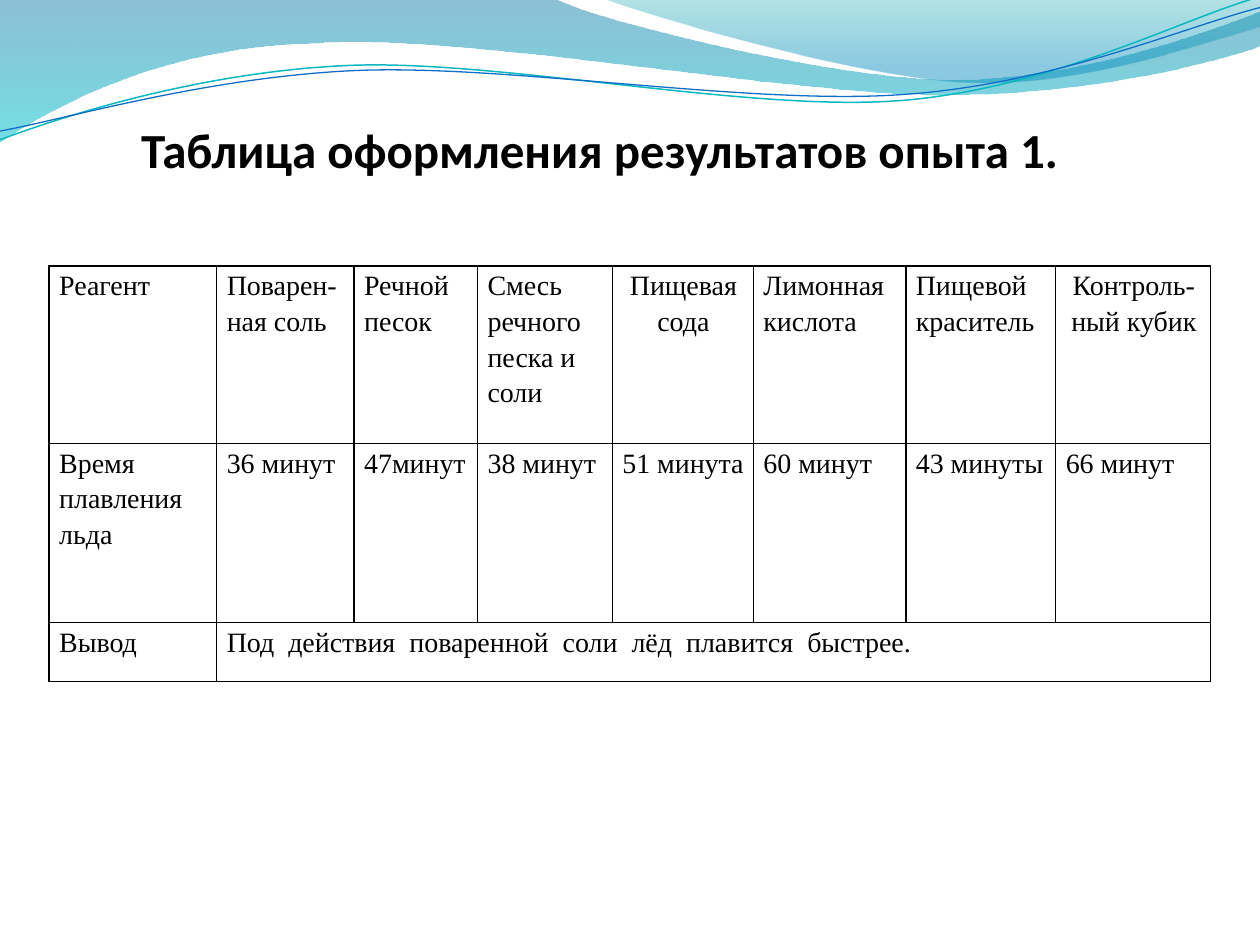
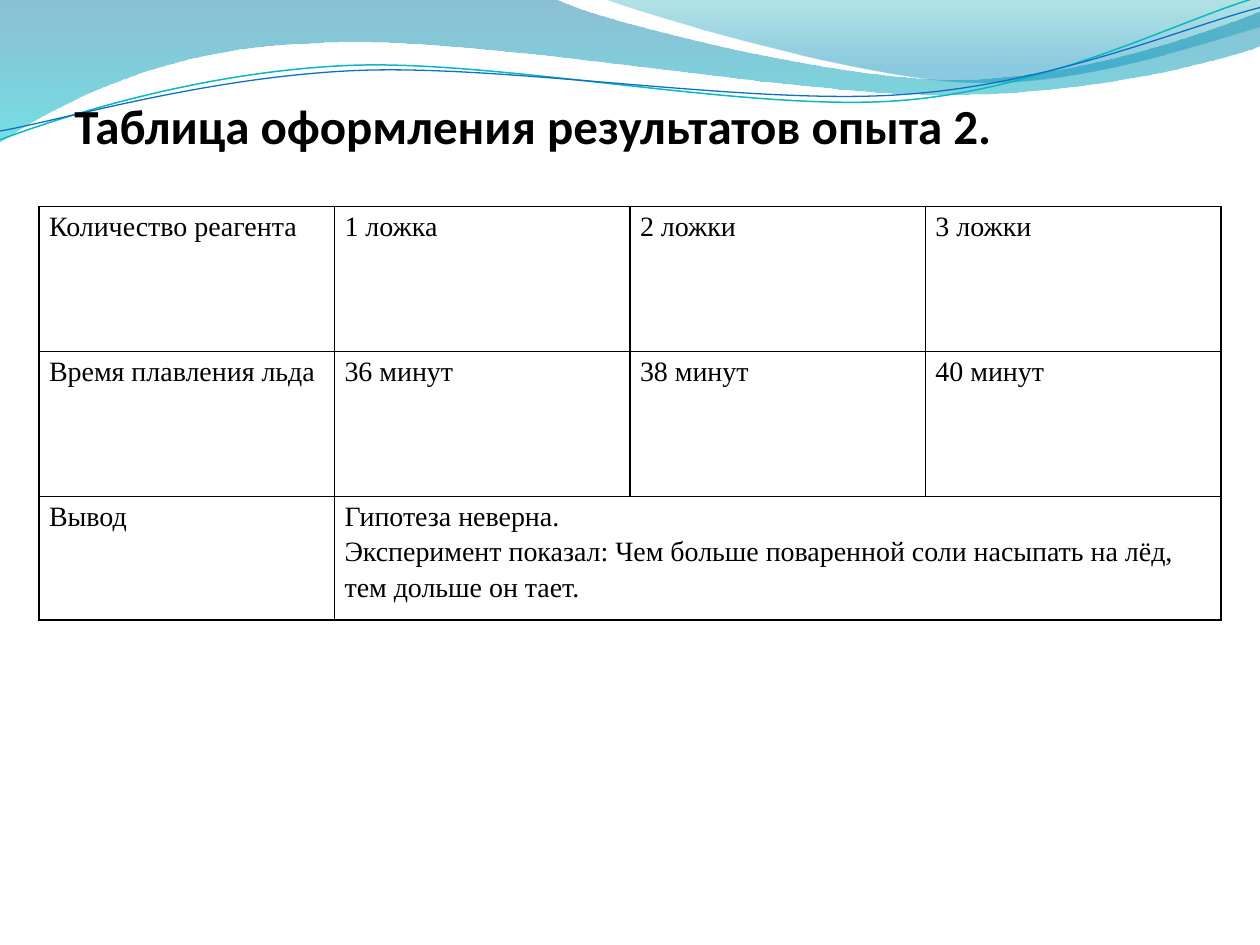
import pptx
import pptx.dml.color
import pptx.enum.text
import pptx.oxml
import pptx.oxml.ns
import pptx.util
from pptx.util import Inches

COLORS = {
    "ink": "000000",
    "band_top": "0074A1",
    "band_bottom": "00C6CF",
    "crest_top": "00A1A9",
    "crest_bottom": "008BBF",
    "teal_line": "0AB8BF",
    "blue_line": "0F6FC6",
}
ALIGN = pptx.enum.text.PP_ALIGN
ANCHOR = pptx.enum.text.MSO_ANCHOR
NS = pptx.oxml.ns.nsdecls("a")
TITLE_FONT = {"name": "Calibri", "size": pptx.util.Pt(28), "bold": True}
CELL_FONT = {"name": "Times New Roman", "size": pptx.util.Pt(16), "bold": False}
TITLE_FRAME = {
    "word_wrap": True,
    "auto_size": pptx.enum.text.MSO_AUTO_SIZE.NONE,
    "vertical_anchor": ANCHOR.MIDDLE,
}
CELL_FRAME = {
    "margin_left": Inches(0.08),
    "margin_right": Inches(0.07),
    "margin_top": 0,
    "margin_bottom": 0,
    "vertical_anchor": ANCHOR.TOP,
}
TABLE_STYLE = {"first_row": False, "horz_banding": False}

BAND = [
    (0, 0), (4.4, -0.01),
    (4.76, 0.17, 6.64, 0.63, 7.58, 0.63),
    (8.53, 0.63, 9.58, 0.26, 10, 0.09),
    (10.01, 0.36),
    (9.83, 0.44, 8.7, 0.76, 7.46, 0.75),
    (6.22, 0.75, 3.82, 0.28, 2.57, 0.34),
    (1.29, 0.36, 0.46, 0.83, -0.01, 1.13),
    (0, 0),
]
CREST = [
    (4.79, -0.01),
    (5.09, 0.11, 6.82, 0.62, 7.69, 0.65),
    (8.56, 0.69, 9.61, 0.32, 10, 0.21),
    (10, 0), (4.79, -0.01),
]
TEAL_CURVE = [
    (0, 1.11),
    (0.48, 0.93, 1.58, 0.57, 2.77, 0.52),
    (3.95, 0.47, 5.93, 0.89, 7.13, 0.8),
    (8.33, 0.71, 9.38, 0.15, 9.98, -0.02),
]
BLUE_CURVE = [
    (0, 1.04),
    (0.47, 0.96, 1.64, 0.61, 2.83, 0.56),
    (4.03, 0.51, 5.97, 0.84, 7.17, 0.75),
    (8.36, 0.67, 9.41, 0.21, 10, 0.06),
]
WAVE_FILLS = [
    (BAND, [(0, "band_top", 45), (0.999, "band_bottom", 55)]),
    (CREST, [(0, "crest_top", 30), (0.8, "crest_bottom", 45)]),
]
WAVE_FILLS[0][1][1] = (1, "band_bottom", 55)
WAVE_LINES = [(TEAL_CURVE, "teal_line", 0.85), (BLUE_CURVE, "blue_line", 0.75)]


def rgb(name):
    return pptx.dml.color.RGBColor.from_string(COLORS[name])


def apply(obj, values):
    for key, value in values.items():
        setattr(obj, key, value)


def set_font(font, values):
    apply(font, values)
    font.color.rgb = rgb("ink")


def add_outline(s, box, segments, close):
    placed = [[(Inches(box[0] + x), Inches(box[1] + y))
               for x, y in zip(seg[::2], seg[1::2])] for seg in segments]
    builder = s.shapes.build_freeform(*placed[0][0])
    builder.add_line_segments([seg[-1] for seg in placed[1:]], close=close)
    sp = builder.convert_to_shape()
    sp.shadow.inherit = False
    lines = sp._element.spPr.findall(".//" + pptx.oxml.ns.qn("a:lnTo"))
    for line, seg in zip(lines, placed[1:]):
        if len(seg) == 3:
            points = "".join(f'<a:pt x="{x - sp.left}" y="{y - sp.top}"/>' for x, y in seg)
            curve = pptx.oxml.parse_xml(f"<a:cubicBezTo {NS}>{points}</a:cubicBezTo>")
            line.getparent().replace(line, curve)
    return sp


def add_waves(s, box):
    for segments, stops in WAVE_FILLS:
        sp = add_outline(s, box, segments, True)
        sp.line.fill.background()
        sp.fill.gradient()
        sp.fill.gradient_angle = 270
        for stop, (position, color, _) in zip(sp.fill.gradient_stops, stops):
            stop.position = position
            stop.color.rgb = rgb(color)
        tints = sp._element.spPr.findall(".//" + pptx.oxml.ns.qn("a:srgbClr"))
        for tint, (_, _, opacity) in zip(tints, stops):
            tint.append(pptx.oxml.parse_xml(f'<a:alpha {NS} val="{opacity * 1000}"/>'))
    for segments, color, width in WAVE_LINES:
        sp = add_outline(s, box, segments, False)
        sp.fill.background()
        sp.line.color.rgb = rgb(color)
        sp.line.width = pptx.util.Pt(width)


def add_title(s, box, text, indent):
    sp = s.shapes.title
    apply(sp, dict(zip(("left", "top", "width", "height"), map(Inches, box))))
    sp._element.getparent().append(sp._element)
    tf = sp.text_frame
    apply(tf, TITLE_FRAME)
    tf.margin_left = Inches(indent)
    p = tf.paragraphs[0]
    p.alignment = ALIGN.LEFT
    r = p.add_run()
    r.text = text
    set_font(r.font, TITLE_FONT)


def add_borders(cell):
    tc_pr = cell._tc.get_or_add_tcPr()
    for side in "LRTB":
        tc_pr.append(pptx.oxml.parse_xml(
            f'<a:ln{side} {NS} w="12700"><a:solidFill>'
            f'<a:srgbClr val="{COLORS["ink"]}"/></a:solidFill></a:ln{side}>'))


def widen_gaps(p, spacing):
    words = p.text.split(" ")
    p.clear()
    for i, word in enumerate(words):
        if i:
            r = p.add_run()
            r.text = " "
            r.font._element.set("spc", str(spacing))
        p.add_run().text = word


def add_results(s, box, widths, heights, rows, centered=(), gap=0):
    table = s.shapes.add_table(len(heights), len(widths), *map(Inches, box)).table
    apply(table, TABLE_STYLE)
    for col, width in zip(table.columns, widths):
        col.width = Inches(width)
    for row, height in zip(table.rows, heights):
        row.height = Inches(height)
    for cell in table.iter_cells():
        add_borders(cell)
        cell.fill.background()
        apply(cell, CELL_FRAME)
    last = len(heights) - 1
    conclusion = table.cell(last, 1)
    conclusion.merge(table.cell(last, len(widths) - 1))
    for i, row in enumerate(rows):
        for j, text in enumerate(row):
            table.cell(i, j).text = text
    if gap:
        widen_gaps(conclusion.text_frame.paragraphs[0], gap)
    for i, row in enumerate(rows):
        for j in range(len(row)):
            for p in table.cell(i, j).text_frame.paragraphs:
                p.line_spacing = 1.15
                p.alignment = ALIGN.CENTER if (i, j) in centered else ALIGN.LEFT
                for r in p.runs:
                    set_font(r.font, CELL_FONT)


def add_experiment(prs, title, results):
    s = prs.slides.add_slide(prs.slide_layouts[5])
    add_waves(s, (0, 0))
    add_results(s, **results)
    add_title(s, **title)


def main():
    prs = pptx.Presentation()
    apply(prs, {"slide_width": Inches(10), "slide_height": Inches(7.5)})
    add_experiment(
        prs,
        {"box": (1.02, 0.9, 7.97, 0.57), "indent": 0.1,
         "text": "Таблица оформления результатов опыта 1."},
        {"box": (0.39, 2.11, 9.22, 3.3),
         "widths": [1.33, 1.09, 0.98, 1.07, 1.12, 1.21, 1.19, 1.23],
         "heights": [1.41, 1.42, 0.47],
         "centered": [(0, 4), (0, 7)],
         "gap": 400,
         "rows": [
             ["Реагент", "Поварен-ная соль", "Речной песок",
              "Смесь речного песка и соли", "Пищевая сода", "Лимонная кислота",
              "Пищевой краситель", "Контроль-ный кубик"],
             ["Время плавления льда", "36 минут", "47минут", "38 минут",
              "51 минута", "60 минут", "43 минуты", "66 минут"],
             ["Вывод", "Под действия поваренной соли лёд плавится быстрее."],
         ]},
    )
    add_experiment(
        prs,
        {"box": (0, 0.71, 10, 0.57), "indent": 0.59,
         "text": "Таблица оформления результатов опыта 2."},
        {"box": (0.31, 1.64, 9.38, 3.28),
         "widths": [9.38 / 4] * 4,
         "heights": [1.15, 1.15, 0.98],
         "rows": [
             ["Количество реагента", "1 ложка", "2 ложки", "3 ложки"],
             ["Время плавления льда", "36 минут", "38 минут", "40 минут"],
             ["Вывод", "Гипотеза неверна.\nЭксперимент показал: Чем больше поваренной "
                       "соли насыпать на лёд, тем дольше он тает."],
         ]},
    )
    prs.save("out.pptx")


if __name__ == "__main__":
    main()
